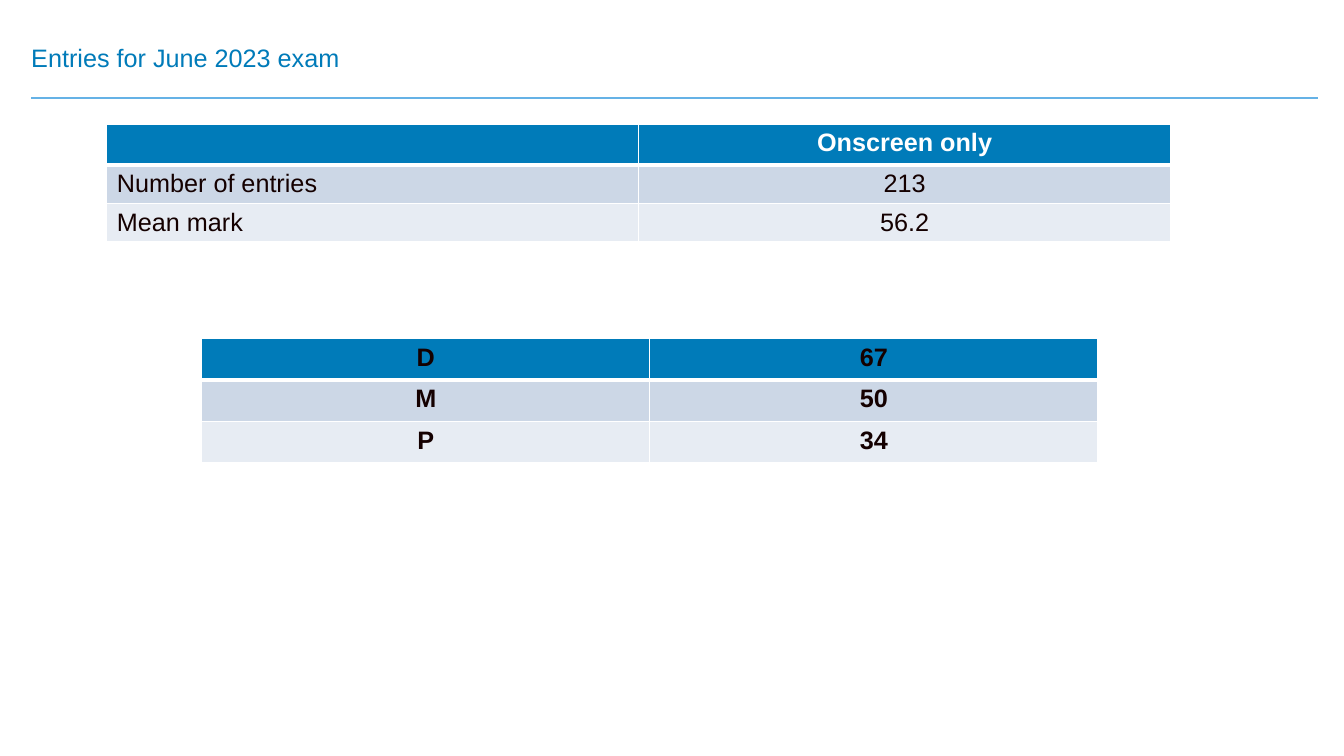
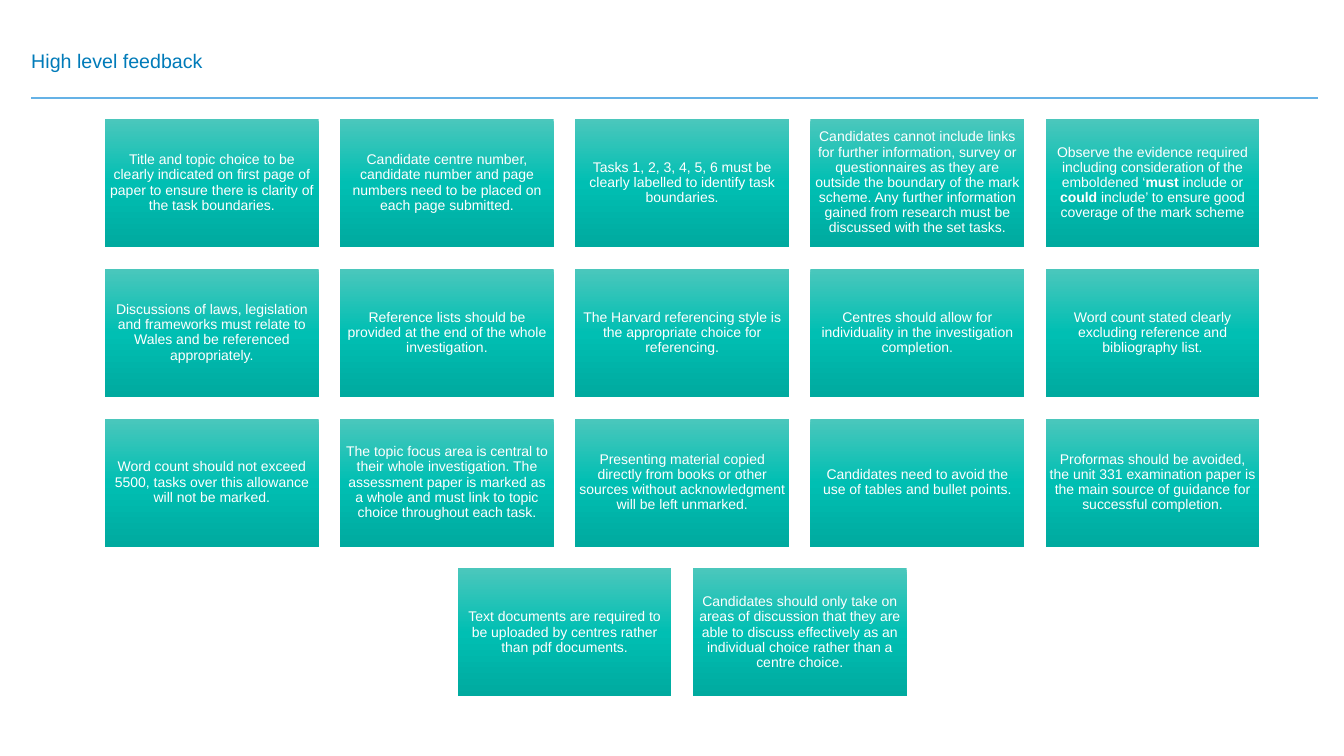
"""Build two slides: June 2023 exam entries and high level feedback."""
from copy import deepcopy
from dataclasses import dataclass

from lxml import etree
from pptx import Presentation
from pptx import util as u
from pptx.dml.color import RGBColor
from pptx.enum import shapes, text
from pptx.oxml.ns import qn

FONT = "Arial"
BLUE, SKY, WHITE, INK = "007BB9", "65B2E6", "FFFFFF", "140000"
BAND_FILLS = (BLUE, "CCD7E6", "E7ECF3")
CARD_GRADIENT = ((0, "4BC7BC"), (0.5, "00BFB3"), (1, "00AA9F"))
CENTER, LEFT = text.PP_ALIGN.CENTER, text.PP_ALIGN.LEFT

CARD_WIDTH, CARD_HEIGHT = 2.12, 1.27
GRID_LEFT, GRID_TOP = 1.04, 1.18
COLUMN_STEP = (10.37 - GRID_LEFT) / 4
ROW_STEP = (5.64 - GRID_TOP) / 3


@dataclass(frozen=True)
class Run:
    words: str
    bold: bool = False


@dataclass(frozen=True)
class ResultTable:
    left: float
    top: float
    width: float
    row_height: float
    rows: tuple
    header_color: str
    label_align: text.PP_ALIGN
    body_bold: bool


RESULTS = (
    ResultTable(1.06, 1.23, 10.55, 0.38,
                (("", "Onscreen only"), ("Number of entries", "213"), ("Mean mark", "56.2")),
                WHITE, LEFT, False),
    ResultTable(2, 3.36, 8.89, 0.41,
                (("D", "67"), ("M", "50"), ("P", "34")),
                INK, CENTER, True),
)

FEEDBACK = (
    (
        [Run("Title and topic choice to be clearly indicated on first page of paper to ensure "
             "there is clarity of the task boundaries.")],
        [Run("Candidate centre number, candidate number and page numbers need to be placed on "
             "each page submitted.")],
        [Run("Tasks 1, 2, 3, 4, 5, 6 must be clearly labelled to identify task boundaries.")],
        [Run("Candidates cannot include links for further information, survey or questionnaires "
             "as they are outside the boundary of the mark scheme. Any further information "
             "gained from research must be discussed with the set tasks.")],
        [Run("Observe the evidence required including consideration of the emboldened ‘"),
         Run("must ", True), Run("include or "), Run("could ", True),
         Run("include’ to ensure good coverage of the mark scheme")],
    ),
    (
        [Run("Discussions of laws, legislation and frameworks must relate to Wales and be "
             "referenced appropriately.")],
        [Run("Reference lists should be provided at the end of the whole investigation.")],
        [Run("The Harvard referencing style is the appropriate choice for referencing.")],
        [Run("Centres should allow for individuality in the investigation completion.")],
        [Run("Word count stated clearly excluding reference and bibliography list.")],
    ),
    (
        [Run("Word count should not exceed 5500, tasks over this allowance will not be marked.")],
        [Run("The topic focus area is central to their whole investigation. The assessment paper "
             "is marked as a whole and must link to topic choice throughout each task.")],
        [Run("Presenting material copied directly from books or other sources without "
             "acknowledgment will be left unmarked.")],
        [Run("Candidates need to avoid the use of tables and bullet points.")],
        [Run("Proformas should be avoided, the unit 331 examination paper is the main source of "
             "guidance for successful completion.")],
    ),
    (
        [Run("Text documents are required to be uploaded by centres rather than pdf documents.")],
        [Run("Candidates should only take on areas of discussion that they are able to discuss "
             "effectively as an individual choice rather than a centre choice.")],
    ),
)


def rgb(hex_color: str) -> RGBColor:
    return RGBColor.from_string(hex_color)


def write_runs(paragraph, runs: list[Run], size: float, color: str, align) -> None:
    paragraph.alignment = align
    for part in runs:
        run = paragraph.add_run()
        run.text = part.words
        run.font.name = FONT
        run.font.size = u.Pt(size)
        run.font.bold = part.bold
        run.font.color.rgb = rgb(color)


def set_insets(frame, inset: float) -> None:
    frame.margin_left = frame.margin_right = u.Inches(inset)
    frame.margin_top = frame.margin_bottom = u.Inches(inset)


def add_titled_slide(deck, layout, heading: str, size: float):
    slide = deck.slides.add_slide(layout)
    title = slide.shapes.title
    title.left, title.top = u.Inches(0.31), u.Inches(0.23)
    title.width, title.height = u.Inches(11.18), u.Inches(0.49)
    frame = title.text_frame
    frame.auto_size = text.MSO_AUTO_SIZE.NONE
    frame.vertical_anchor = text.MSO_ANCHOR.BOTTOM
    set_insets(frame, 0)
    frame.paragraphs[0].line_spacing = 0.9
    write_runs(frame.paragraphs[0], [Run(heading)], size, BLUE, LEFT)
    return slide


def move_rule_to_layout(slide, layout) -> None:
    rule = slide.shapes.add_connector(shapes.MSO_CONNECTOR.STRAIGHT, u.Inches(0.31),
                                      u.Inches(0.97), u.Inches(13.07), u.Inches(0.97))
    rule.line.color.rgb = rgb(SKY)
    rule.line.width = u.Pt(1.75)
    etree.SubElement(rule.element.spPr, qn("a:effectLst"))
    layout.shapes.element.append(rule.element)


def add_borders(properties, row: int) -> None:
    widths = {"L": 1, "R": 1, "T": 3 if row == 1 else 1, "B": 3 if row == 0 else 1}
    for side, points in widths.items():
        border = etree.SubElement(properties, qn(f"a:ln{side}"), w=str(u.Pt(points)))
        fill = etree.SubElement(border, qn("a:solidFill"))
        etree.SubElement(fill, qn("a:srgbClr"), val=WHITE)


def add_result_table(slide, result: ResultTable) -> None:
    row_count, column_count = len(result.rows), len(result.rows[0])
    holder = slide.shapes.add_table(
        row_count, column_count, u.Inches(result.left), u.Inches(result.top),
        u.Inches(result.width), u.Inches(result.row_height * row_count))
    grid = holder.table
    grid.horz_banding = False
    cells = zip(grid.iter_cells(), holder.element.iter(qn("a:tc")))
    for index, (cell, element) in enumerate(cells):
        row, column = divmod(index, column_count)
        add_borders(element.get_or_add_tcPr(), row)
        cell.fill.solid()
        cell.fill.fore_color.rgb = rgb(BAND_FILLS[row])
        words = result.rows[row][column]
        if words:
            write_runs(cell.text_frame.paragraphs[0],
                       [Run(words, row == 0 or result.body_bold)], 18,
                       INK if row else result.header_color,
                       CENTER if column or row == 0 else result.label_align)


def fill_gradient(card) -> None:
    card.fill.gradient()
    card.fill.gradient_angle = 270
    stops = next(card.element.spPr.iter(qn("a:gsLst")))
    stops.append(deepcopy(stops[0]))
    for stop, (position, color) in zip(card.fill.gradient_stops, CARD_GRADIENT):
        stop.position = position
        stop.color.rgb = rgb(color)


def add_card(slide, left: float, top: float, runs: list[Run]) -> None:
    card = slide.shapes.add_shape(shapes.MSO_SHAPE.RECTANGLE, u.Inches(left), u.Inches(top),
                                  u.Inches(CARD_WIDTH), u.Inches(CARD_HEIGHT))
    card.shadow.inherit = False
    card.line.fill.background()
    fill_gradient(card)
    frame = card.text_frame
    frame.word_wrap = True
    frame.vertical_anchor = text.MSO_ANCHOR.MIDDLE
    set_insets(frame, 0.04)
    advice = frame.paragraphs[0]
    advice.line_spacing = 0.9
    advice.space_after = u.Pt(3.5)
    write_runs(advice, runs, 10, WHITE, CENTER)


def main() -> None:
    deck = Presentation()
    deck.slide_width, deck.slide_height = u.Inches(13.33), u.Inches(7.5)
    layout = deck.slide_layouts[5]

    entries = add_titled_slide(deck, layout, "Entries for June 2023 exam", 18)
    move_rule_to_layout(entries, layout)
    for result in RESULTS:
        add_result_table(entries, result)

    feedback = add_titled_slide(deck, layout, "High level feedback", 14)
    for row, cards in enumerate(FEEDBACK):
        indent = (len(FEEDBACK[0]) - len(cards)) / 2
        for column, runs in enumerate(cards):
            add_card(feedback, GRID_LEFT + (indent + column) * COLUMN_STEP,
                     GRID_TOP + row * ROW_STEP, runs)

    deck.save("out.pptx")


if __name__ == "__main__":
    main()
